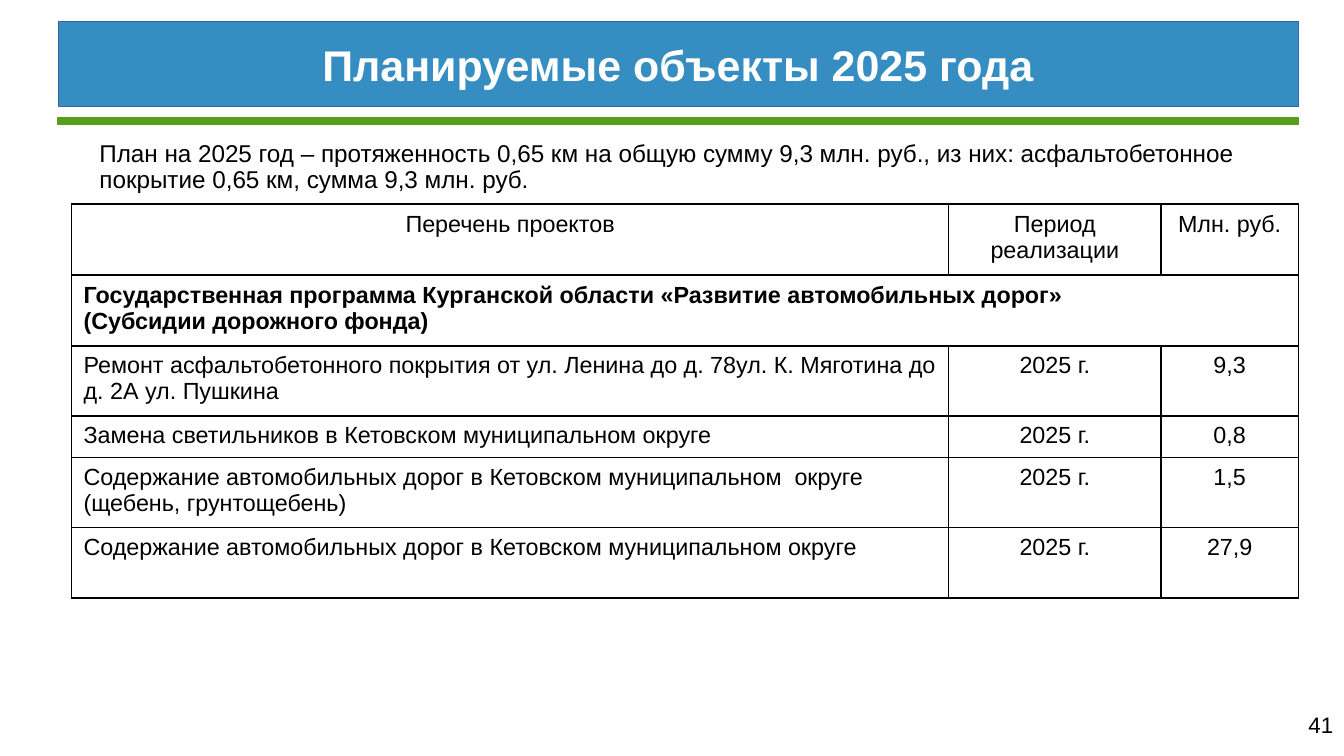
from dataclasses import dataclass

from lxml.etree import SubElement
from pptx import Presentation
from pptx.dml.color import RGBColor
from pptx.enum.shapes import MSO_SHAPE
from pptx.enum.text import MSO_ANCHOR, MSO_AUTO_SIZE, PP_ALIGN
from pptx.oxml.ns import qn
from pptx.util import Cm, Pt


@dataclass(frozen=True)
class Theme:
    font: str = "Arial"
    banner: RGBColor = RGBColor(0x35, 0x8D, 0xC1)
    banner_line: RGBColor = RGBColor(0x34, 0x65, 0xA4)
    accent: RGBColor = RGBColor(0x57, 0x9D, 0x1C)
    white: RGBColor = RGBColor(0xFF, 0xFF, 0xFF)
    ink: RGBColor = RGBColor(0, 0, 0)
    title_size: float = 23
    body_size: float = 13
    table_size: float = 12.5
    number_size: float = 12
    line_width: float = 0.75
    border_width: float = 0.96


theme = Theme()


def assign(target, values):
    for name, value in values.items():
        setattr(target, name, value)


def write(frame, text, size, color, bold=False, paragraph_format=None):
    frame.text = text
    for para in frame.paragraphs:
        assign(para, paragraph_format or {})
        for span in para.runs:
            assign(span.font, {"name": theme.font, "size": Pt(size), "bold": bold})
            span.font.color.rgb = color


deck = Presentation()
assign(deck, {"slide_width": Cm(25.4), "slide_height": Cm(14.29)})
page = deck.slides.add_slide(deck.slide_layouts[1])

title = page.shapes.title
assign(title, {"left": Cm(1.1), "top": Cm(0.41), "width": Cm(23.44), "height": Cm(1.6)})
title.fill.solid()
title.fill.fore_color.rgb = theme.banner
title.line.color.rgb = theme.banner_line
title.line.width = Pt(theme.line_width)
assign(title.text_frame, {
    "margin_left": Cm(0.18), "margin_right": Cm(0.18),
    "margin_top": Cm(0.1), "margin_bottom": Cm(0.1),
    "vertical_anchor": MSO_ANCHOR.MIDDLE, "auto_size": MSO_AUTO_SIZE.NONE,
})
write(title.text_frame, "Планируемые объекты 2025 года", theme.title_size, theme.white, True,
      {"alignment": PP_ALIGN.CENTER})

number = page.shapes.add_textbox(Cm(24), Cm(13.31), Cm(1.4), Cm(0.74))
assign(number.text_frame, {
    "word_wrap": True, "margin_left": Cm(0.2), "margin_right": Cm(0.2),
    "margin_top": Cm(0.13), "margin_bottom": Cm(0.1),
})
write(number.text_frame, "41", theme.number_size, theme.ink,
      paragraph_format={"alignment": PP_ALIGN.RIGHT})

rule = page.shapes.add_shape(MSO_SHAPE.RECTANGLE, Cm(1.1), Cm(2.23), Cm(23.44), Cm(0.13))
rule.shadow.inherit = False
rule.fill.solid()
rule.fill.fore_color.rgb = theme.accent
rule.line.color.rgb = theme.accent
rule.line.width = Pt(theme.line_width)

summary = page.placeholders[1]
assign(summary, {"left": Cm(1.65), "top": Cm(2.57), "width": Cm(23.55), "height": Cm(1.6)})
assign(summary.text_frame, {
    "margin_left": Cm(0.23), "margin_right": Cm(0.23),
    "margin_top": Cm(0.1), "margin_bottom": Cm(0.1),
    "vertical_anchor": MSO_ANCHOR.TOP, "auto_size": MSO_AUTO_SIZE.NONE,
})
write(summary.text_frame,
      "План на 2025 год – протяженность 0,65 км на общую сумму 9,3 млн. руб., из них: "
      "асфальтобетонное покрытие 0,65 км, сумма 9,3 млн. руб.",
      theme.body_size, theme.ink,
      paragraph_format={"line_spacing": 0.9, "space_before": Pt(0)})
for para in summary.text_frame.paragraphs:
    properties = para._p.get_or_add_pPr()
    properties.set("marL", "0")
    properties.set("indent", "0")
    SubElement(properties, qn("a:buNone"))

year = "2025 г."
rows = [
    ("Перечень проектов", "Период реализации", "Млн. руб."),
    ("Государственная программа Курганской области «Развитие автомобильных дорог»\n"
     "(Субсидии дорожного фонда)", "", ""),
    ("Ремонт асфальтобетонного покрытия от ул. Ленина до д. 78ул. К. Мяготина до д. 2А ул. Пушкина",
     year, "9,3"),
    ("Замена светильников в Кетовском муниципальном округе", year, "0,8"),
    ("Содержание автомобильных дорог в Кетовском муниципальном  округе (щебень, грунтощебень)",
     year, "1,5"),
    ("Содержание автомобильных дорог в Кетовском муниципальном округе", year, "27,9"),
]
column_widths = [16.58, 4.01, 2.6]
row_heights = [1.34, 1.34, 1.24, 0.79, 1.24, 1.34]
program_row = 1

table = page.shapes.add_table(
    len(rows), len(column_widths), Cm(1.35), Cm(3.86),
    Cm(sum(column_widths)), Cm(sum(row_heights))).table
assign(table, {"first_row": False, "horz_banding": False})
for column, width in zip(table.columns, column_widths):
    column.width = Cm(width)
for row, height in zip(table.rows, row_heights):
    row.height = Cm(height)
table.cell(program_row, 0).merge(table.cell(program_row, 2))

for row_index, texts in enumerate(rows):
    for column_index, text in enumerate(texts):
        cell = table.cell(row_index, column_index)
        assign(cell, {
            "margin_left": Cm(0.23), "margin_right": Cm(0.23),
            "margin_top": Cm(0.13), "margin_bottom": Cm(0.13),
        })
        centred = row_index == 0 or column_index > 0
        if text:
            write(cell.text_frame, text, theme.table_size, theme.ink, row_index == program_row,
                  {"alignment": PP_ALIGN.CENTER if centred else PP_ALIGN.LEFT})
        properties = cell._tc.get_or_add_tcPr()
        for side in ("a:lnL", "a:lnR", "a:lnT", "a:lnB"):
            border = SubElement(properties, qn(side), w=str(Pt(theme.border_width)))
            paint = SubElement(border, qn("a:solidFill"))
            SubElement(paint, qn("a:srgbClr"), val=str(theme.ink))
        cell.fill.background()

deck.save("out.pptx")
